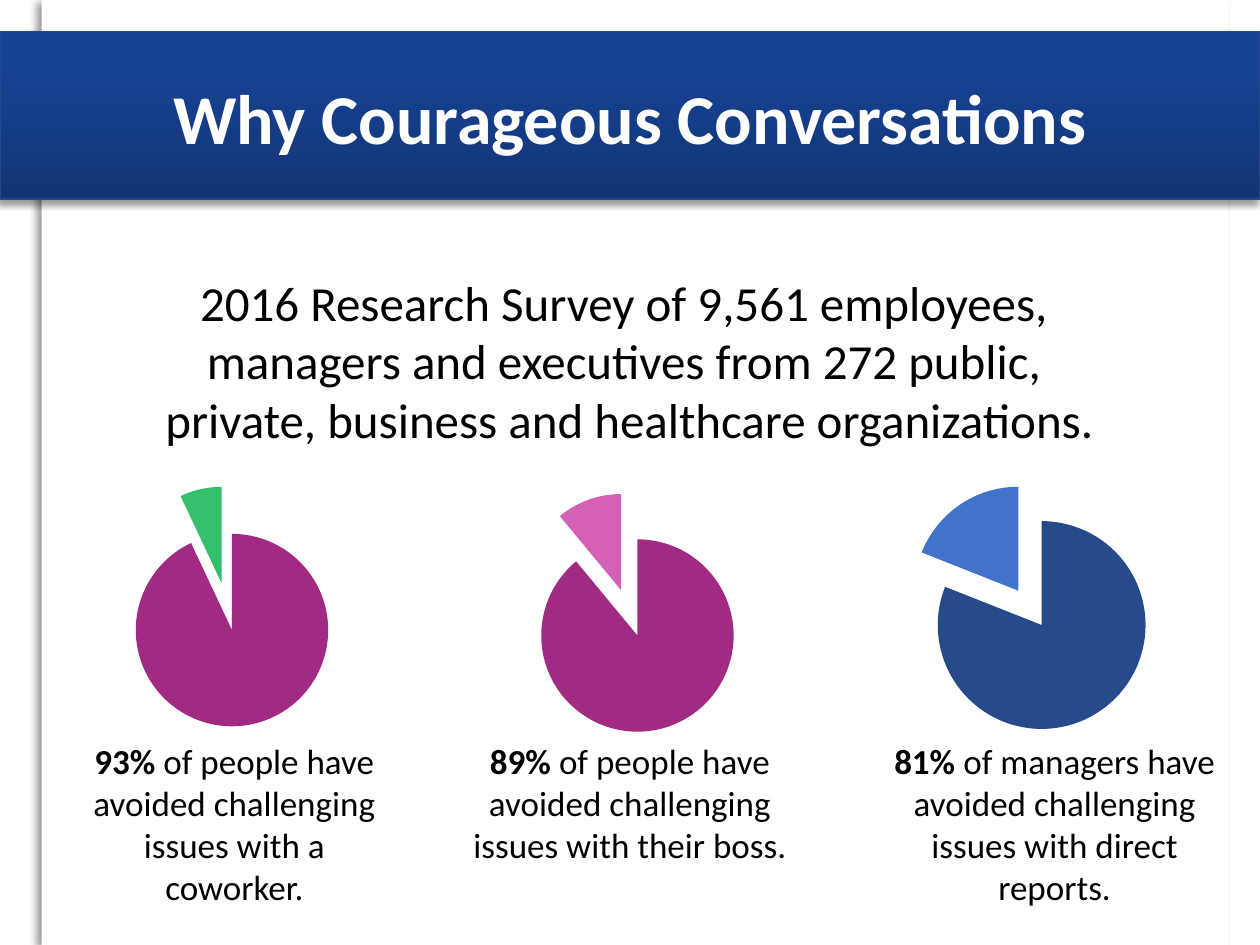
import lxml.etree
import pptx
import pptx.chart.data
import pptx.dml.color
import pptx.enum.chart
import pptx.enum.shapes
import pptx.enum.text
import pptx.oxml
import pptx.oxml.ns
import pptx.util

Inches = pptx.util.Inches
Pt = pptx.util.Pt
qn = pptx.oxml.ns.qn

CAPTION_TOP = 5.82
PLOT_SHARE = 0.88  # part of the chart height taken by the exploded pie


def color(value):
    return pptx.dml.color.RGBColor.from_string(value)


def drawing_xml(body):
    """Parse one element of the DrawingML or chart namespace."""
    tag, rest = body.split(">", 1)
    return pptx.oxml.parse_xml(
        f'{tag} {pptx.oxml.ns.nsdecls("a", "c")}>{rest}'
    )


class SlideBuilder:
    font_name = "Calibri"
    text_color = "000000"

    def __init__(self, presentation):
        self.slide = presentation.slides.add_slide(presentation.slide_layouts[5])

    def style(self, font, size, value=None, bold=None):
        font.name = self.font_name
        font.size = Pt(size)
        font.color.rgb = color(value or self.text_color)
        font.bold = bold

    def panel(self, left, top, width, height, fill=None, stops=(), line=None):
        """Rectangle with a soft shadow and a solid or upward gradient fill."""
        shape = self.slide.shapes.add_shape(
            pptx.enum.shapes.MSO_SHAPE.RECTANGLE,
            Inches(left), Inches(top), Inches(width), Inches(height))
        shape.shadow.inherit = False
        if line:
            shape.line.color.rgb = color(line)
            shape.line.width = Pt(0.75)
        else:
            shape.line.fill.background()
        properties = shape._element.spPr
        if stops:
            marks = "".join(
                f'<a:gs pos="{position * 1000}"><a:srgbClr val="{value}"/></a:gs>'
                for position, value in stops)
            properties.find(qn("a:prstGeom")).addnext(drawing_xml(
                f'<a:gradFill rotWithShape="1"><a:gsLst>{marks}</a:gsLst>'
                '<a:lin ang="16200000" scaled="0"/></a:gradFill>'))
        else:
            shape.fill.solid()
            shape.fill.fore_color.rgb = color(fill)
        properties.find(qn("a:effectLst")).append(drawing_xml(
            f'<a:outerShdw blurRad="{Pt(4)}" dist="{Pt(3)}" dir="8100000" '
            'rotWithShape="0"><a:srgbClr val="000000"><a:alpha val="40000"/>'
            '</a:srgbClr></a:outerShdw>'))

    def title(self, text, left, top, width, height):
        title = self.slide.shapes.title
        title.left, title.top = Inches(left), Inches(top)
        title.width, title.height = Inches(width), Inches(height)
        self.slide.shapes._spTree.append(title._element)  # in front of the banner
        frame = title.text_frame
        frame.text = text
        frame.word_wrap = True
        frame.vertical_anchor = pptx.enum.text.MSO_ANCHOR.MIDDLE
        paragraph = frame.paragraphs[0]
        paragraph.alignment = pptx.enum.text.PP_ALIGN.CENTER
        self.style(paragraph.font, 40, "FFFFFF", True)

    def text(self, paragraphs, left, top, width, height, size):
        """Centred text box; each paragraph is a list of (text, bold) runs."""
        frame = self.slide.shapes.add_textbox(
            Inches(left), Inches(top), Inches(width), Inches(height)).text_frame
        frame.word_wrap = True
        for index, runs in enumerate(paragraphs):
            paragraph = frame.add_paragraph() if index else frame.paragraphs[0]
            paragraph.alignment = pptx.enum.text.PP_ALIGN.CENTER
            self.style(paragraph.font, size)
            for number, (words, bold) in enumerate(runs):
                for line_number, line in enumerate(words.split("\n")):
                    if line_number:
                        paragraph.add_line_break()
                    run = paragraph.add_run()
                    run.text = line
                    self.style(run.font, size, bold=bold)

    def pie(self, values, colors, explosion, left, top, width, height):
        data = pptx.chart.data.CategoryChartData()
        data.categories = ["1", "2", "3", "4"]
        data.add_series("Series 1", values)
        chart = self.slide.shapes.add_chart(
            pptx.enum.chart.XL_CHART_TYPE.PIE, Inches(left), Inches(top),
            Inches(width), Inches(height), data).chart
        chart.has_legend = False
        chart.has_title = False
        self.style(chart.font, 10)
        chart.plots[0].vary_by_categories = True

        series = chart.plots[0].series[0]
        series._element.find(qn("c:tx")).addnext(
            drawing_xml(f'<c:explosion val="{explosion}"></c:explosion>'))
        for index, value in enumerate(colors):
            point = series.points[index].format
            point.fill.solid()
            point.fill.fore_color.rgb = color(value)
            point.line.fill.background()

        plot_area = chart._chartSpace.chart.plotArea
        for layout in plot_area.findall(qn("c:layout")):
            plot_area.remove(layout)
        share_x = PLOT_SHARE * height / width
        sizes = {"x": (1 - share_x) / 2, "y": (1 - PLOT_SHARE) / 2,
                 "w": share_x, "h": PLOT_SHARE}
        plot_area.insert(0, drawing_xml(
            '<c:layout><c:manualLayout><c:layoutTarget val="inner"/>'
            '<c:xMode val="edge"/><c:yMode val="edge"/>'
            + "".join(f'<c:{key} val="{size:.4f}"/>' for key, size in sizes.items())
            + '</c:manualLayout></c:layout>'))


def main():
    presentation = pptx.Presentation()
    presentation.slide_width = Inches(10)
    presentation.slide_height = Inches(7.5)

    builder = SlideBuilder(presentation)
    builder.panel(0.33, 0, 9.42, 7.5, fill="FFFFFF")
    builder.panel(0, 0.25, 10, 1.33, line="24488A",
                  stops=[(0, "123473"), (80, "174395"), (100, "154398")])
    builder.title("Why Courageous Conversations", 0.5, 0.54, 9, 0.77)
    builder.text(
        [[("2016 Research Survey of 9,561 employees, ", False)],
         [("managers and executives from 272 public, \n"
           "private, business and healthcare organizations.", False)]],
        0.08, 2.11, 9.83, 1.51, 28)

    magenta, navy, red = "A12A83", "274A8B", "911D2B"
    findings = [
        # percent, rest of caption, caption (left, width, height),
        # values, main colour, slice colour, explosion, chart box
        ("93% ", "of people have avoided challenging issues with a coworker.",
         (0.54, 2.64, 1.45), (93, 0, 0, 7), magenta, "33BF6C", 25,
         (0.24, 3.73, 3.12, 2.17)),
        ("89% ", "of people have avoided challenging issues with their boss.",
         (3.63, 2.74, 1.41), (89, None, None, 11), magenta, "D561B7", 25,
         (3.57, 3.78, 2.85, 2.17)),
        ("81% ", "of managers have avoided challenging issues with direct reports.",
         (6.99, 2.76, 1.75), (81, None, None, 19), navy, "4273CA", 20,
         (6.78, 3.7, 2.79, 2.25)),
    ]
    for (percent, finding, (left, width, height), values,
         main_color, slice_color, explosion, chart_box) in findings:
        builder.text([[(percent, True), (finding, False)]],
                     left, CAPTION_TOP, width, height, 20)
        builder.pie(values, (main_color, navy, red, slice_color),
                    explosion, *chart_box)

    presentation.save("out.pptx")


if __name__ == "__main__":
    main()
